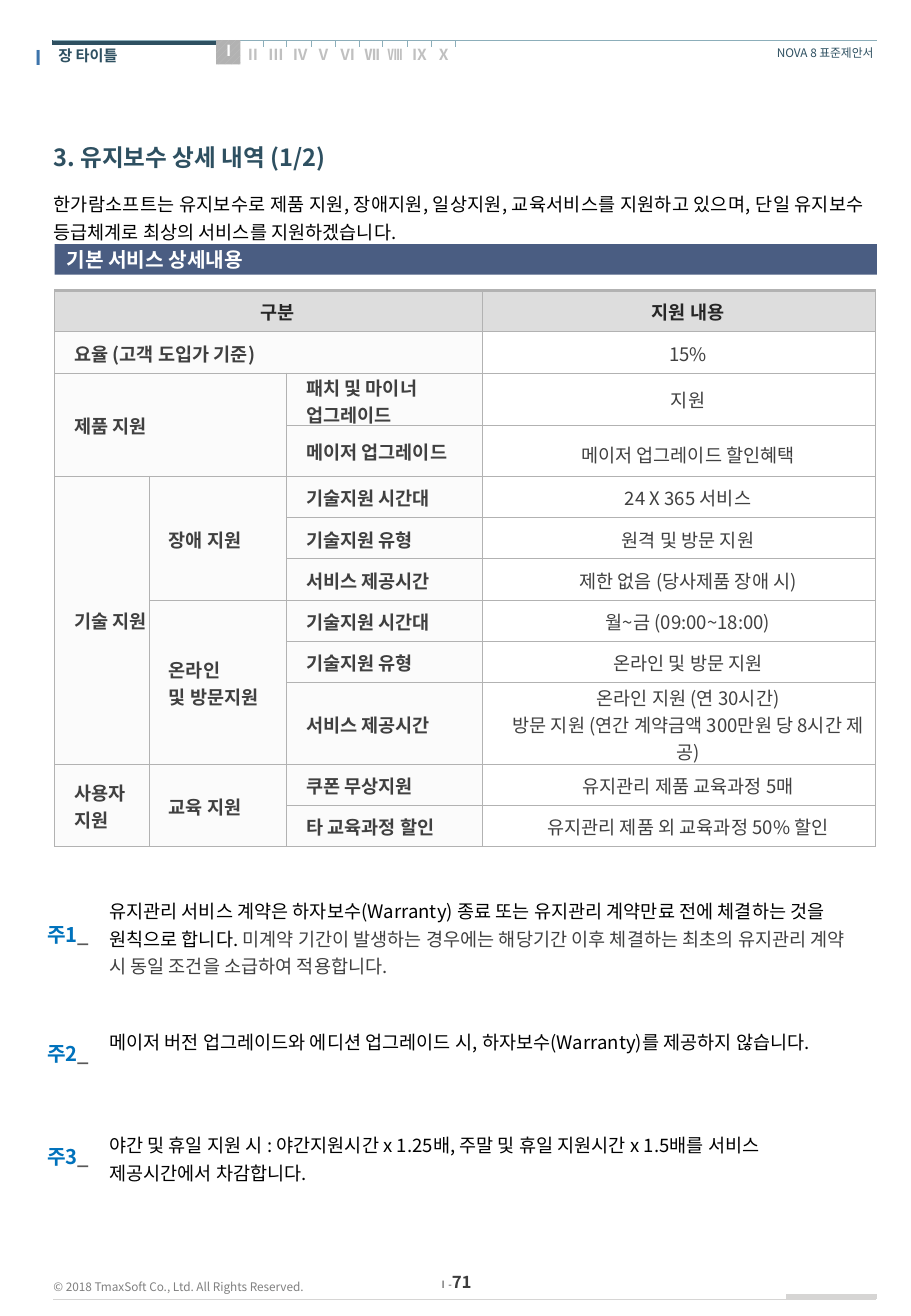
"""Build the maintenance service detail slide."""
from lxml import etree
from pptx import Presentation
from pptx.dml.color import RGBColor
from pptx.enum.dml import MSO_PATTERN
from pptx.enum.shapes import MSO_CONNECTOR, MSO_SHAPE
from pptx.enum.text import MSO_ANCHOR, PP_ALIGN
from pptx.oxml.ns import qn
from pptx.util import Pt

LEFT, CENTER, RIGHT, JUSTIFY = PP_ALIGN.LEFT, PP_ALIGN.CENTER, PP_ALIGN.RIGHT, PP_ALIGN.JUSTIFY
TOP, MIDDLE = MSO_ANCHOR.TOP, MSO_ANCHOR.MIDDLE
STRAIGHT, RECTANGLE = MSO_CONNECTOR.STRAIGHT, MSO_SHAPE.RECTANGLE
DIAGONAL = MSO_PATTERN.WIDE_UPWARD_DIAGONAL

PX = 9144
FONT = "Noto Sans CJK KR"
COLORS = {
    "white": "FFFFFF", "black": "000000", "navy": "2E5061", "bar": "4A5D82",
    "chapter": "3D74AB", "note": "0072BC", "tick": "8CAEBA", "tab": "C0C0C0",
    "border": "B2B2B2", "footer_line": "D6D5D4", "copyright": "808080",
    "page": "3D3D3D", "body": "404040", "underscore": "595959",
    "header": "262626", "header_fill": "DDDDDD", "label_fill": "FBFBFB",
}

COLUMN_WIDTHS = [78, 113, 161, 324]
ROW_HEIGHTS = [34, 34, 43, 42, 34, 34, 34, 34, 34, 67, 34, 34]
LABELS = [
    (0, 0, 1, 3, "구분"),
    (1, 0, 1, 3, "요율 (고객 도입가 기준)"),
    (2, 0, 2, 2, "제품 지원"),
    (2, 2, 1, 1, "패치 및 마이너 업그레이드"),
    (3, 2, 1, 1, "메이저 업그레이드"),
    (4, 0, 6, 1, "기술 지원"),
    (4, 1, 3, 1, "장애 지원"),
    (7, 1, 3, 1, "온라인\n및 방문지원"),
    *[(row + step, 2, 1, 1, label) for row in (4, 7)
      for step, label in enumerate(["기술지원 시간대", "기술지원 유형", "서비스 제공시간"])],
    (10, 0, 2, 1, "사용자 지원"),
    (10, 1, 2, 1, "교육 지원"),
    (10, 2, 1, 1, "쿠폰 무상지원"),
    (11, 2, 1, 1, "타 교육과정 할인"),
]
SUPPORT = [
    "지원 내용", "15%", "지원", "메이저 업그레이드 할인혜택", "24 X 365 서비스",
    "원격 및 방문 지원", "제한 없음 (당사제품 장애 시)", "월~금 (09:00~18:00)",
    "온라인 및 방문 지원",
    "온라인 지원 (연 30시간)\n방문 지원 (연간 계약금액 300만원 당 8시간 제공)",
    "유지관리 제품 교육과정 5매", "유지관리 제품 외 교육과정 50% 할인",
]
NOTES = [
    (731, 754, 642, ["유지관리 서비스 계약은 하자보수(Warranty) 종료 또는 유지관리 계약만료 전에 "
                     "체결하는 것을 원칙으로 합니다. ",
                     "미계약 기간이 발생하는 경우에는 해당기간 이후 체결하는 최초의 유지관리 계약 시 "
                     "동일 조건을 소급하여 적용합니다."]),
    (839, 852, 641, ["메이저 버전 업그레이드와 에디션 업그레이드 시, "
                     "하자보수(Warranty)를 제공하지 않습니다."]),
    (924, 937, 618, ["야간 및 휴일 지원 시 : 야간지원시간 x 1.25배, 주말 및 휴일 지원시간 x 1.5배를 "
                     "서비스 제공시간에서 차감합니다."]),
]


def rgb(name):
    return RGBColor.from_string(COLORS[name])


class Page:
    """Hold the slide and its style, and draw each kind of element."""

    def __init__(self, slide):
        self.shapes = slide.shapes

    def set_text(self, paragraph, parts, size, color, bold=False, align=LEFT, spacing=None):
        for part in parts:
            paragraph.add_run().text = part
        paragraph.alignment = align
        paragraph.line_spacing = spacing
        font = paragraph.font
        font.size, font.bold, font.name = Pt(size), bold, FONT
        font.color.rgb = rgb(color)
        latin = next(paragraph._p.iter(qn("a:latin")))
        east_asian = etree.Element(qn("a:ea"), typeface=FONT)
        latin.addnext(east_asian)
        return paragraph.runs

    def frame(self, shape, insets, anchor):
        frame = shape.text_frame
        frame.word_wrap, frame.vertical_anchor = True, anchor
        (frame.margin_left, frame.margin_top,
         frame.margin_right, frame.margin_bottom) = [inset * PX for inset in insets]
        return frame.paragraphs[0]

    def text(self, box, parts, size, color, insets=(0, 0, 0, 0), anchor=TOP, **style):
        shape = self.shapes.add_textbox(*[length * PX for length in box])
        return self.set_text(self.frame(shape, insets, anchor), parts, size, color, **style)

    def rectangle(self, box):
        shape = self.shapes.add_shape(RECTANGLE, *[length * PX for length in box])
        shape.shadow.inherit = False
        shape.line.fill.background()
        return shape

    def banner(self, box, title):
        shape = self.rectangle(box)
        shape.fill.solid()
        shape.fill.fore_color.rgb = rgb("bar")
        self.set_text(self.frame(shape, (10, 0, 10, 0), MIDDLE), [title], 12, "white", bold=True)

    def hatched(self, box):
        fill = self.rectangle(box).fill
        fill.patterned()
        fill.pattern = DIAGONAL
        fill.fore_color.rgb, fill.back_color.rgb = rgb("tab"), rgb("border")

    def line(self, x1, y1, x2, y2, color, width):
        line = self.shapes.add_connector(STRAIGHT, x1 * PX, y1 * PX, x2 * PX, y2 * PX)
        line.line.color.rgb, line.line.width = rgb(color), Pt(width)
        etree.SubElement(line._element.spPr, qn("a:effectLst"))

    def border(self, cell, side, width):
        edge = etree.SubElement(cell._tc.get_or_add_tcPr(), qn("a:ln" + side), w=str(Pt(width)))
        fill = etree.SubElement(edge, qn("a:solidFill"))
        etree.SubElement(fill, qn("a:srgbClr"), val=COLORS["border"])

    def table(self, left, top, widths, heights):
        table = self.shapes.add_table(len(heights), len(widths), left * PX, top * PX,
                                      sum(widths) * PX, sum(heights) * PX).table
        table.first_row = table.horz_banding = False
        for column, width in zip(table.columns, widths):
            column.width = width * PX
        for row, height in zip(table.rows, heights):
            row.height = height * PX
        for row in range(len(heights)):
            for column in range(len(widths)):
                cell = table.cell(row, column)
                for side in "LRTB":
                    self.border(cell, side, 1.5 if row == 0 and side == "T" else 0.5)
                fill = "header_fill" if row == 0 else "white" if column == 3 else "label_fill"
                cell.fill.solid()
                cell.fill.fore_color.rgb = rgb(fill)
                cell.vertical_anchor = MIDDLE
                cell.margin_left, cell.margin_top = 16 * PX, PX
                cell.margin_right, cell.margin_bottom = PX, 0
        return table

    def fill_cell(self, cell, content, **style):
        frame = cell.text_frame
        for number, line in enumerate(content.split("\n")):
            paragraph = frame.add_paragraph() if number else frame.paragraphs[0]
            self.set_text(paragraph, [line], 11, **style)


def draw_header(page):
    page.text((48, 38, 128, 15), ["장 타이틀"], 9, "navy", bold=True)
    page.text((600, 38, 119, 12), ["NOVA 8 표준제안서"], 7, "navy", align=RIGHT)
    page.line(178, 35, 43, 35, "navy", 3.5)
    page.line(722, 33, 44, 33, "tick", 0.3)
    page.text((22, 37, 20, 22), ["Ⅰ"], 12, "chapter", bold=True, align=CENTER)
    page.hatched((178, 33, 20, 20))
    page.text((182, 34, 16, 15), ["Ⅰ"], 9, "white", bold=True)
    for index, numeral in enumerate("ⅡⅢⅣⅤⅥⅦⅧⅨⅩ"):
        page.text((202 + 157 * index // 8, 37, 18, 15), [numeral], 9, "tab", bold=True)
        tick = 217 + 158 * index // 8
        page.line(tick, 33, tick, 39, "tick", 0.3)


def draw_footer(page):
    _, number = page.text((350, 1046, 49, 17), ["Ⅰ-", "71"], 6, "page", (0, 5, 0, 5), MIDDLE,
                          align=CENTER)
    number.font.size, number.font.bold = Pt(10), True
    page.text((44, 1047, 232, 24), ["© 2018 TmaxSoft Co., Ltd. All Rights Reserved."], 7,
              "copyright", (0, 5, 0, 5), MIDDLE)
    page.line(721, 1069, 44, 1069, "footer_line", 0.3)
    page.line(722, 1067, 647, 1067, "footer_line", 3.5)


def draw_services(page):
    table = page.table(45, 239, COLUMN_WIDTHS, ROW_HEIGHTS)
    for row, column, tall, wide, label in LABELS:
        cell = table.cell(row, column)
        if tall * wide > 1:
            cell.merge(table.cell(row + tall - 1, column + wide - 1))
        page.fill_cell(cell, label, color="body" if row else "header", bold=True,
                       align=LEFT if row else CENTER)
    for row, support in enumerate(SUPPORT):
        page.fill_cell(table.cell(row, 3), support, color="body" if row else "header",
                       bold=row == 0, align=CENTER, spacing=1.25 if row == 3 else None)


def draw_notes(page):
    for number, (top, label_top, width, parts) in enumerate(NOTES, 1):
        runs = page.text((80, top, width, 56), parts, 11, "black", (10, 5, 10, 5), spacing=1.25)
        for run in runs[1:]:
            run.font.color.rgb = rgb("body")
        _, underscore = page.text((29, label_top, 64, 30), [f"주{number}", "_"], 12, "note",
                                  (10, 5, 10, 5), bold=True)
        underscore.font.color.rgb = rgb("underscore")


def main():
    deck = Presentation()
    deck.slide_width, deck.slide_height = 750 * PX, 1083 * PX
    page = Page(deck.slides.add_slide(deck.slide_layouts[6]))
    draw_footer(page)
    draw_header(page)
    page.text((44, 112, 677, 31), ["3. 유지보수 상세 내역 (1/2)"], 14, "navy", bold=True,
              spacing=1.25)
    page.banner((45, 201, 677, 25), "기본 서비스 상세내용")
    page.text((44, 154, 677, 29),
              ["한가람소프트는 유지보수로 제품 지원, 장애지원, 일상지원, 교육서비스를 지원하고 있으며, "
               "단일 유지보수 등급체계로 최상의 서비스를 지원하겠습니다."],
              11, "black", (0, 0, 10, 5), align=JUSTIFY, spacing=1.25)
    draw_services(page)
    draw_notes(page)
    deck.save("out.pptx")


if __name__ == "__main__":
    main()
